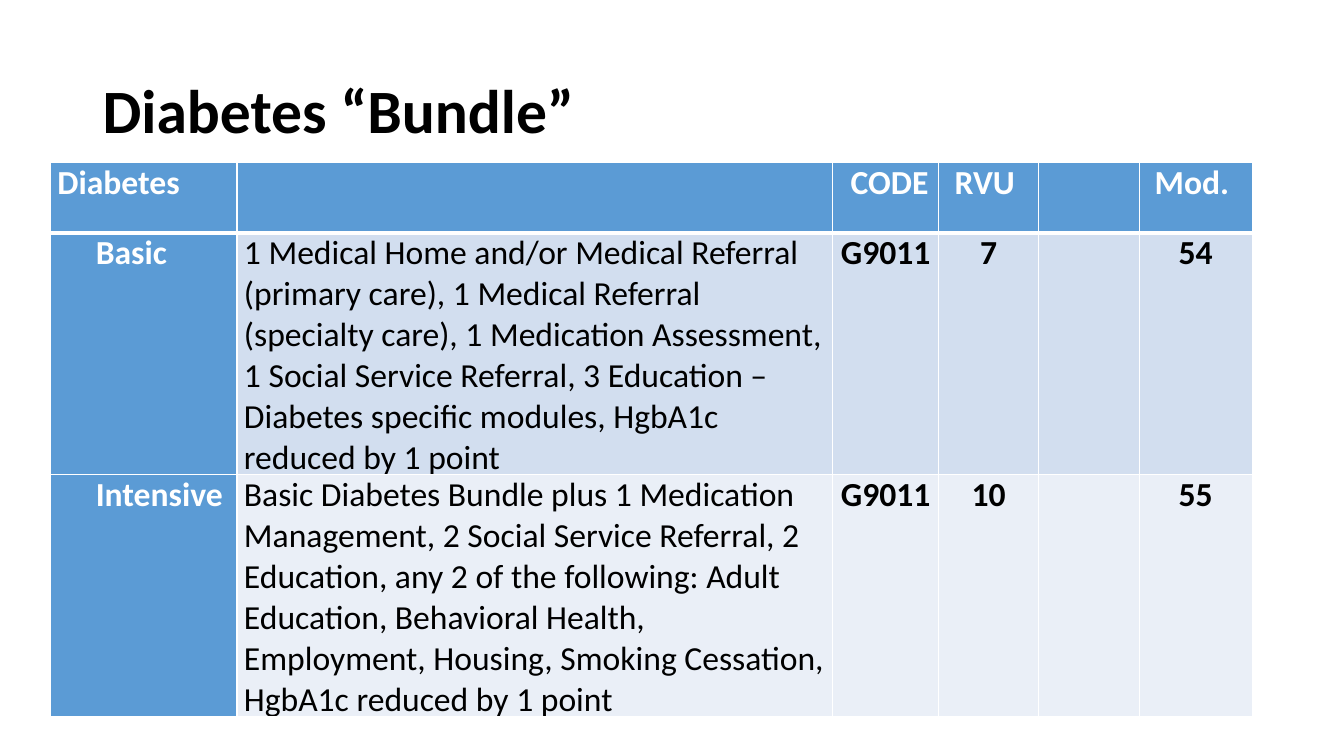
"""Builds the diabetes bundle slide with its service code table."""
from dataclasses import dataclass

from lxml import etree
from pptx import Presentation
from pptx.dml.color import RGBColor
from pptx.enum.text import MSO_ANCHOR, PP_ALIGN
from pptx.oxml.ns import qn
from pptx.util import Inches, Pt

LEFT, CENTER = PP_ALIGN.LEFT, PP_ALIGN.CENTER
MIDDLE = MSO_ANCHOR.MIDDLE


@dataclass(frozen=True)
class Theme:
    font: str = "Calibri"
    title_size: int = 44
    table_size: int = 24
    ink: str = "000000"
    white: str = "FFFFFF"
    header: str = "5B9BD5"
    thin_rule: int = 1
    thick_rule: int = 3


@dataclass(frozen=True)
class Column:
    heading: str
    width: float
    align: PP_ALIGN = CENTER
    bold: bool = True


@dataclass(frozen=True)
class Bundle:
    cells: tuple[str, ...]
    fill: str


THEME = Theme()
HEADER_HEIGHT, BUNDLE_HEIGHT = 0.7, 2.11
CELL_MARGIN, LEVEL_INDENT = 0.07, 0.38

COLUMNS = (
    Column("Diabetes", 1.85, LEFT),
    Column("", 5.91, LEFT, bold=False),
    Column(" CODE", 1.05),
    Column("RVU ", 0.99),
    Column("", 1),
    Column("Mod. ", 1.12),
)
BUNDLES = (
    Bundle((
        "Basic",
        "1 Medical Home and/or Medical Referral (primary care), "
        "1 Medical Referral (specialty care), 1 Medication Assessment, "
        "1 Social Service Referral, 3 Education – Diabetes specific modules, "
        "HgbA1c reduced by 1 point",
        "G9011", "7", "", "54"), "D2DEEF"),
    Bundle((
        "Intensive",
        "Basic Diabetes Bundle plus 1 Medication Management, "
        "2 Social Service Referral, 2 Education, any 2 of the following: "
        "Adult Education, Behavioral Health, Employment, Housing, "
        "Smoking Cessation, HgbA1c reduced by 1 point",
        "G9011", "10", "", "55"), "EAEFF7"),
)


def style_text(p, size: int, color: str, bold: bool) -> None:
    """Format every run of a paragraph."""
    for r in p.runs:
        r.font.name = THEME.font
        r.font.size = Pt(size)
        r.font.bold = bold
        r.font.color.rgb = RGBColor.from_string(color)


def set_borders(cell, top: int, bottom: int) -> None:
    """Draw white rules on all four sides of a cell."""
    tc_pr = cell._tc.get_or_add_tcPr()
    sides = {"lnL": THEME.thin_rule, "lnR": THEME.thin_rule,
             "lnT": top, "lnB": bottom}
    for i, (side, width) in enumerate(sides.items()):
        ln = etree.Element(qn(f"a:{side}"), w=str(Pt(width)))
        fill = etree.SubElement(ln, qn("a:solidFill"))
        etree.SubElement(fill, qn("a:srgbClr"), val=THEME.white)
        tc_pr.insert(i, ln)


def fill_cell(cell, text: str, column: Column, fill: str, color: str) -> None:
    """Set the text, margins and fill of a cell."""
    cell.margin_left = cell.margin_right = Inches(CELL_MARGIN)
    cell.margin_top = cell.margin_bottom = 0
    cell.fill.solid()
    cell.fill.fore_color.rgb = RGBColor.from_string(fill)
    p = cell.text_frame.paragraphs[0]
    p.text = text
    p.alignment = column.align
    style_text(p, THEME.table_size, color, column.bold)


def add_title(s, text: str) -> None:
    """Add the slide title."""
    sp = s.shapes.add_textbox(Inches(0.92), Inches(0.4), Inches(11.5), Inches(1.45))
    tf = sp.text_frame
    tf.word_wrap = True
    tf.vertical_anchor = MIDDLE
    p = tf.paragraphs[0]
    p.text = text
    p.line_spacing = 0.9
    style_text(p, THEME.title_size, THEME.ink, True)


def add_bundle_table(s) -> None:
    """Add the table with one row for each bundle."""
    heights = (HEADER_HEIGHT,) + (BUNDLE_HEIGHT,) * len(BUNDLES)
    table = s.shapes.add_table(
        len(heights), len(COLUMNS), Inches(0.5), Inches(1.61),
        Inches(sum(c.width for c in COLUMNS)), Inches(sum(heights))).table
    for row, height in zip(table.rows, heights):
        row.height = Inches(height)
    for j, column in enumerate(COLUMNS):
        table.columns[j].width = Inches(column.width)
        cell = table.cell(0, j)
        fill_cell(cell, column.heading, column, THEME.header, THEME.white)
        set_borders(cell, THEME.thin_rule, THEME.thick_rule)
        for i, bundle in enumerate(BUNDLES, 1):
            cell = table.cell(i, j)
            fill = bundle.fill if j else THEME.header
            color = THEME.ink if j else THEME.white
            fill_cell(cell, bundle.cells[j], column, fill, color)
            if j == 0:
                cell.margin_left = Inches(CELL_MARGIN + LEVEL_INDENT)
            top = THEME.thick_rule if i == 1 else THEME.thin_rule
            set_borders(cell, top, THEME.thin_rule)


def main() -> None:
    """Build and save the slide."""
    prs = Presentation()
    prs.slide_width, prs.slide_height = Inches(13.33), Inches(7.5)
    s = prs.slides.add_slide(prs.slide_layouts[6])
    add_title(s, "Diabetes “Bundle”")
    add_bundle_table(s)
    prs.save("out.pptx")


if __name__ == "__main__":
    main()
